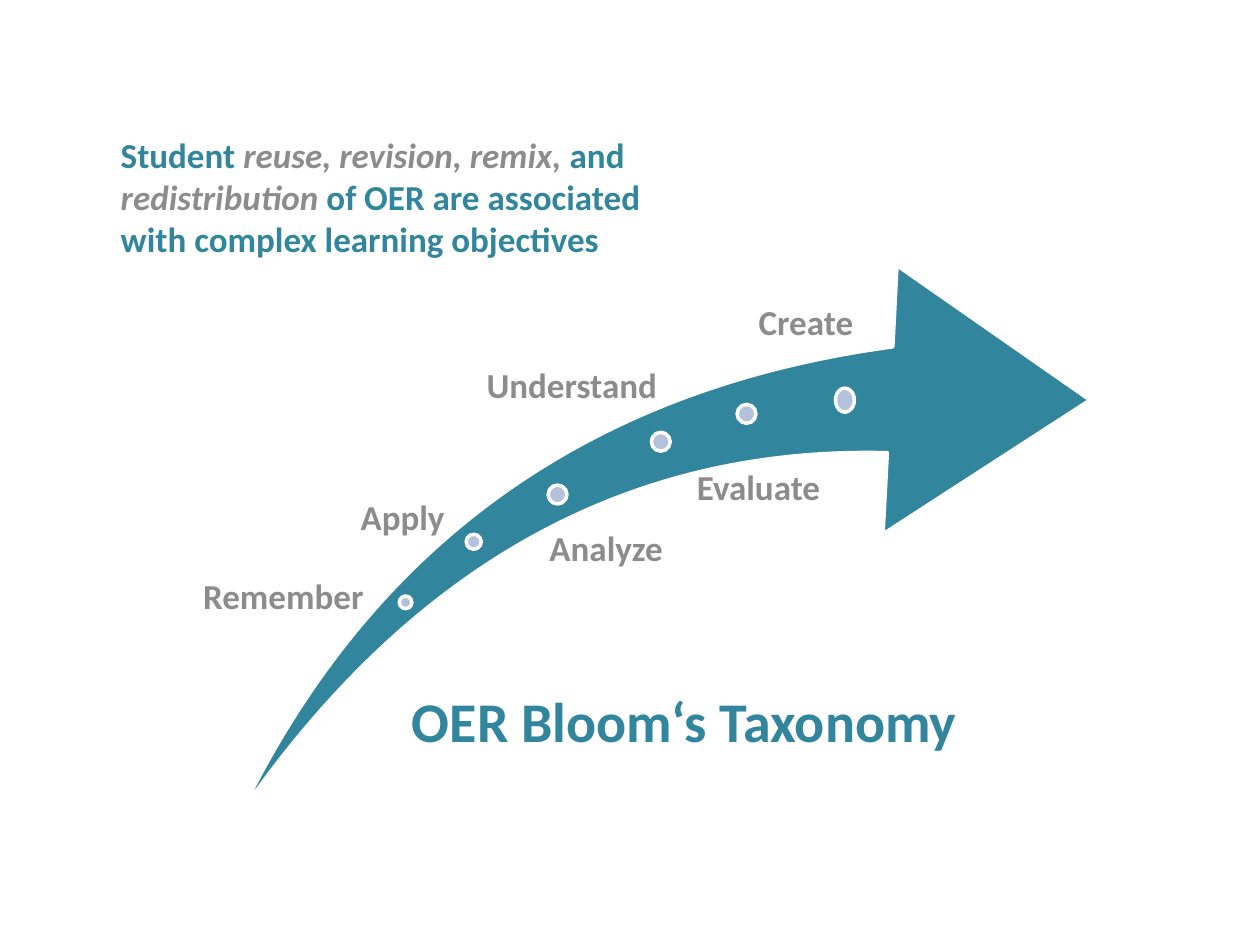
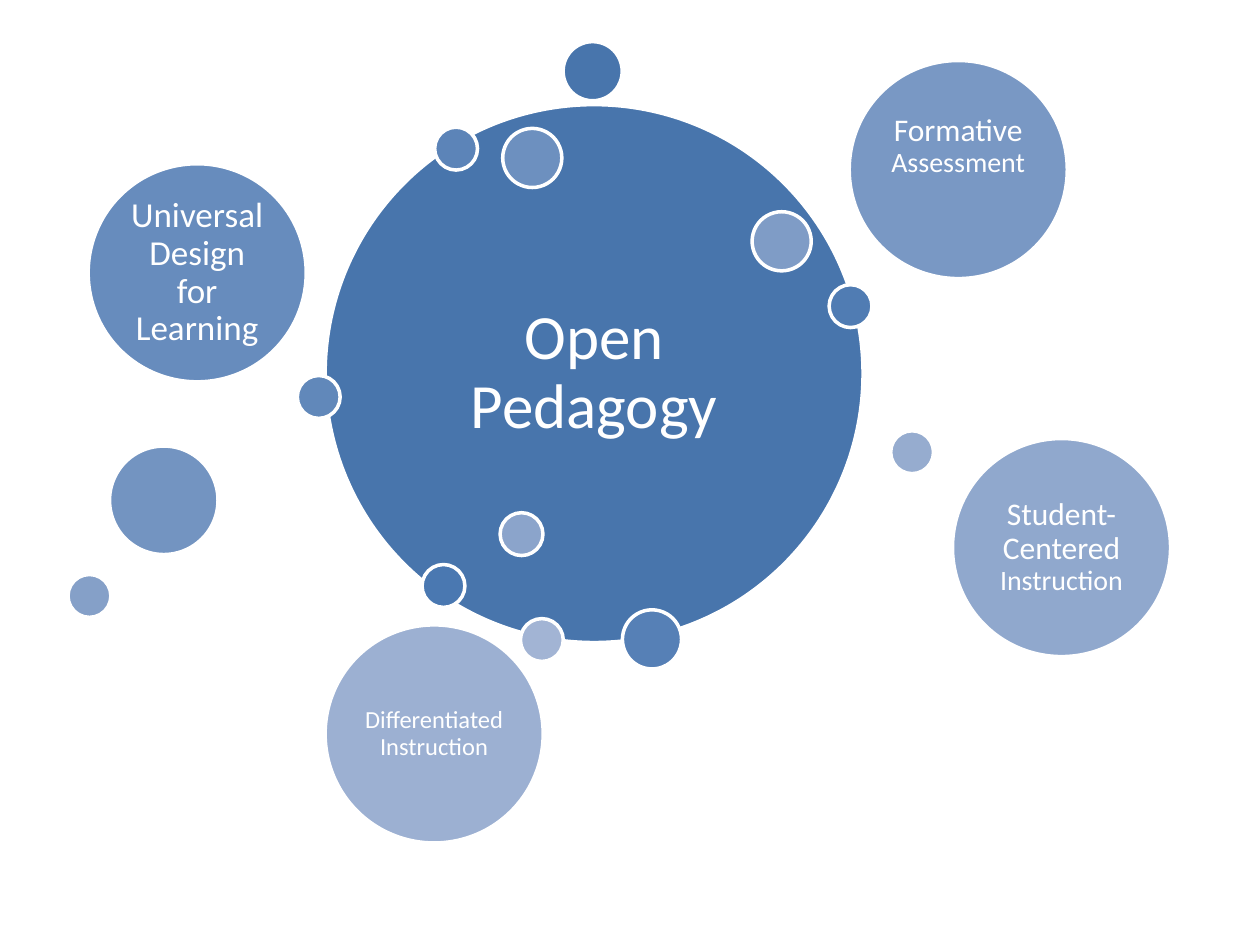
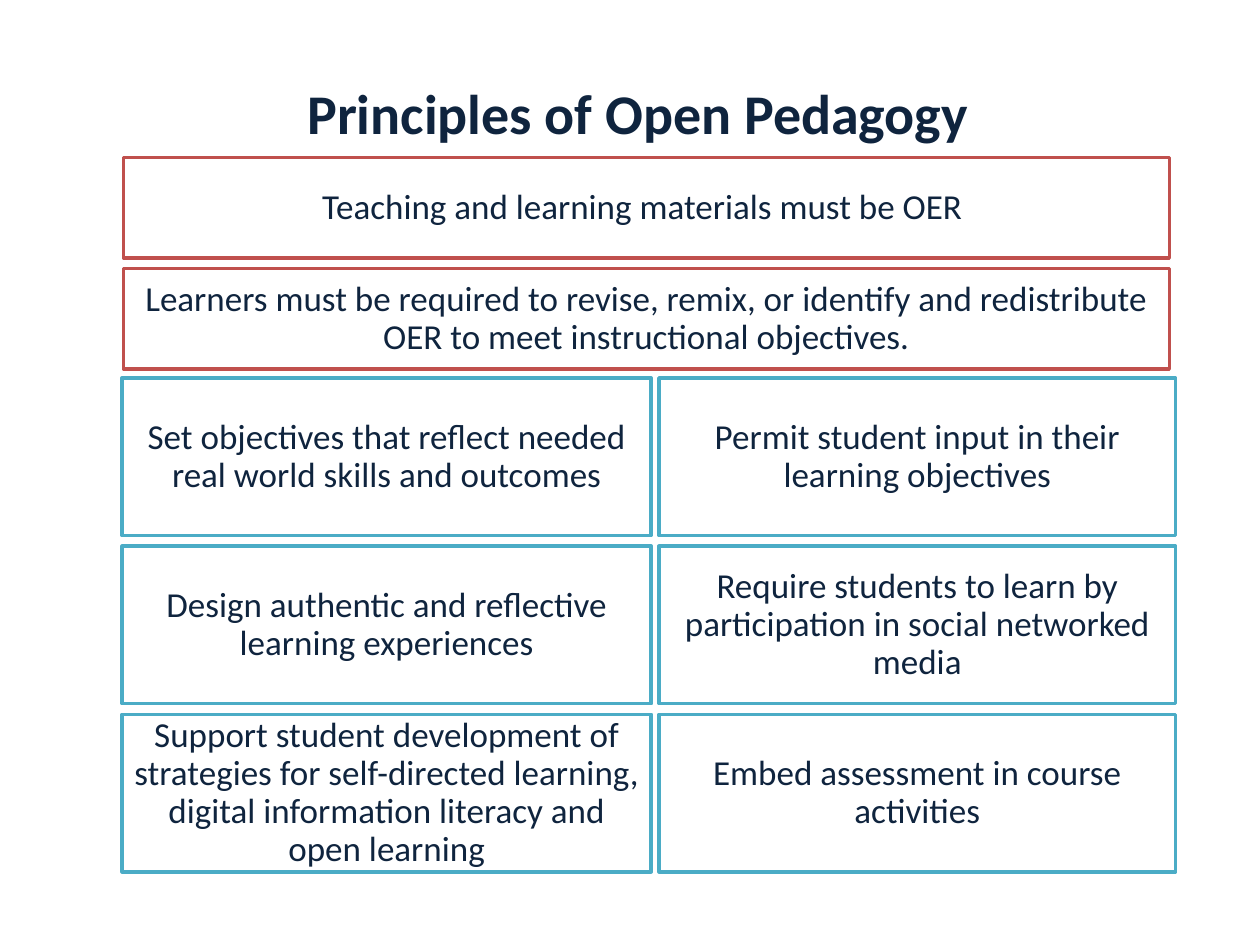
"""Three slides on open pedagogy: taxonomy arrow, idea bubbles and principles."""
from pptx import Presentation
from pptx.dml.color import RGBColor
from pptx.enum import shapes, text
from pptx.util import Pt

FONT = "Calibri"
COLORS = {
    "teal": "31859C", "grey": "8C8C8C", "dot": "B3C1DB", "white": "FFFFFF",
    "navy": "0F243E", "red": "C0504D", "aqua": "4BACC6",
    "core": "4875AC", "dark": "4A78B1", "pale": "A2B4D4",
}
LEFT, CENTER = text.PP_ALIGN.LEFT, text.PP_ALIGN.CENTER
TOP, MIDDLE, BOTTOM = (text.MSO_ANCHOR.TOP, text.MSO_ANCHOR.MIDDLE,
                       text.MSO_ANCHOR.BOTTOM)

TAXONOMY_TITLE = "OER Bloom‘s Taxonomy"
ARROW_BOX = (165, 133.2, 440, 369.4)
ARROW_TURN = 9.4
ARROW_BENDS = (0.163, 0.314)
CLAIM = [
    ("Student ", "teal", False),
    ("reuse, revision, remix, ", "grey", True),
    ("and ", "teal", False),
    ("redistribution ", "grey", True),
    ("of OER are associated with complex learning objectives", "teal", False),
]
LEVELS = [
    ("Remember", (113.8, 329, 140.4, 49), TOP),
    ("Apply", (203.8, 272.2, 75.6, 49), MIDDLE),
    ("Analyze", (311.8, 293, 90.7, 42.5), MIDDLE),
    ("Understand", (275.8, 196.6, 118, 49), MIDDLE),
    ("Evaluate", (396, 262.8, 84.2, 33.8), MIDDLE),
    ("Create", (431.3, 149, 67, 49), BOTTOM),
]
DOTS = [
    (228.2, 340.6, 7.2, 7.2), (266.4, 305.3, 8.6, 8.6),
    (313.2, 277.2, 10.8, 10.8), (372.2, 247, 10.8, 10.8),
    (421.2, 231.1, 10.8, 10.8), (477.4, 221.8, 10.8, 13.7),
]

DIAMETERS = {"core": 307.4, "idea": 124.6, "large": 62, "medium": 33.8, "small": 24.5}
CORE = ("core", 185.8, 59.8, [("Open Pedagogy", 36)], 10.8, 0)
TOP_BUBBLE = ("medium", 321.8, 23.8)
BUBBLES = [
    ("small", 241.2, 322.6),
    ("small", 473.8, 162.7),
    ("medium", 355.7, 348.5),
    ("small", 248.4, 72.7),
    ("small", 169.9, 214.6),
    ("idea", 50.4, 93.6, [("Universal Design for Learning", 20)], 5.8, 0),
    ("medium", 287.3, 73.4),
    ("large", 62.6, 254.9),
    ("idea", 485.3, 34.6, [("Formative ", 18), ("Assessment", 16)], 5, 26),
    ("medium", 429.8, 121),
    ("small", 38.9, 328.3),
    ("small", 285.8, 293),
    ("idea", 544.3, 250.6, [("Student-Centered ", 18), ("Instruction", 16)], 5, 0),
    ("small", 509, 246.2),
    ("idea", 185.8, 357.1, [("Differentiated Instruction", 14)], 4.3, 0),
    ("small", 297.4, 353.5),
]

PRINCIPLES_TITLE = "Principles of Open Pedagogy "
REQUIREMENTS = [
    "Teaching and learning materials must be OER ",
    "Learners must be required to revise, remix, or identify and redistribute "
    "OER to meet instructional objectives.",
]
PRACTICES = [
    ("Set objectives that reflect needed real world skills and outcomes",
     "Permit student input in their learning objectives"),
    ("Design authentic and reflective learning experiences",
     "Require students to learn by participation in social networked media"),
    ("Support student development of strategies for self-directed learning, "
     "digital information literacy and open learning",
     "Embed assessment in course activities"),
]
PRACTICE_COLUMNS = [(69.8, 302.4), (376.6, 295.2)]


def rgb(color):
    return RGBColor.from_string(COLORS.get(color, color))


def write(frame, runs, anchor=MIDDLE, align=CENTER, inset=None, lift=0, spacing=0.9):
    frame.word_wrap = True
    frame.auto_size = text.MSO_AUTO_SIZE.NONE
    frame.vertical_anchor = anchor
    if inset is not None:
        frame.margin_left = frame.margin_right = frame.margin_top = Pt(inset)
        frame.margin_bottom = Pt(inset + lift)
    paragraph = frame.paragraphs[0]
    paragraph.alignment = align
    paragraph.line_spacing = spacing
    for words, size, color, bold, italic in runs:
        run = paragraph.add_run()
        run.text = words
        font = run.font
        font.name, font.size, font.bold, font.italic = FONT, Pt(size), bold, italic
        font.color.rgb = rgb(color)


def place_title(slide, words, box, color, align):
    title = slide.shapes.title
    title.left, title.top, title.width, title.height = map(Pt, box)
    write(title.text_frame, [(words, 32, color, True, False)], align=align, spacing=1.0)


def add_label(slide, box, runs, **layout):
    label = slide.shapes.add_textbox(*map(Pt, box))
    write(label.text_frame, runs, align=LEFT, **layout)


def add_figure(slide, kind, box, fill, line="white"):
    figure = slide.shapes.add_shape(kind, *map(Pt, box))
    figure.shadow.inherit = False
    figure.fill.solid()
    figure.fill.fore_color.rgb = rgb(fill)
    figure.line.color.rgb = rgb(line)
    figure.line.width = Pt(2)
    return figure


def add_bubble(slide, fill, size, left, top, runs=(), inset=0, lift=0):
    diameter = DIAMETERS[size]
    bubble = add_figure(slide, shapes.MSO_SHAPE.OVAL, (left, top, diameter, diameter), fill)
    if runs:
        write(bubble.text_frame,
              [(words, points, "white", False, False) for words, points in runs],
              inset=inset, lift=lift)


def add_card(slide, box, words, line):
    card = add_figure(slide, shapes.MSO_SHAPE.RECTANGLE, box, "white", line)
    write(card.text_frame, [(words, 20, "navy", False, False)], inset=3.6)


def shade(step, steps):
    ends = zip(rgb("dark"), rgb("pale"))
    return "".join(f"{round(a + (b - a) * step / steps):02X}" for a, b in ends)


def build_taxonomy(slide):
    place_title(slide, TAXONOMY_TITLE, (228.2, 353.5, 329.8, 116), "teal", LEFT)
    arrow = add_figure(slide, shapes.MSO_SHAPE.SWOOSH_ARROW, ARROW_BOX, "teal")
    arrow.rotation = ARROW_TURN
    for index, bend in enumerate(ARROW_BENDS):
        arrow.adjustments[index] = bend
    for dot in DOTS:
        add_figure(slide, shapes.MSO_SHAPE.OVAL, dot, "dot")
    for level, box, anchor in LEVELS:
        add_label(slide, box, [(level, 20, "grey", True, False)], anchor=anchor, inset=2.2)
    add_label(slide, (61.9, 72.7, 351.4, 34.6),
              [(words, 20, color, True, italic) for words, color, italic in CLAIM],
              anchor=TOP, spacing=1.0)


def build_bubbles(slide):
    for bubble in (CORE, TOP_BUBBLE):
        add_bubble(slide, "core", *bubble)
    for step, bubble in enumerate(BUBBLES):
        add_bubble(slide, shade(step, len(BUBBLES) - 1), *bubble)


def build_principles(slide):
    place_title(slide, PRINCIPLES_TITLE, (67.7, 36, 601.2, 56.2), "navy", CENTER)
    for row, requirement in enumerate(REQUIREMENTS):
        add_card(slide, (70.6, 90 + 63.4 * row, 597.6, 57.6), requirement, "red")
    for row, pair in enumerate(PRACTICES):
        for (left, width), practice in zip(PRACTICE_COLUMNS, pair):
            add_card(slide, (left, 216 + 96.1 * row, width, 90), practice, "aqua")


def main():
    deck = Presentation()
    deck.slide_width, deck.slide_height = Pt(720), Pt(540)
    title_only, blank = deck.slide_layouts[5], deck.slide_layouts[6]
    for layout, build in ((title_only, build_taxonomy), (blank, build_bubbles),
                          (title_only, build_principles)):
        build(deck.slides.add_slide(layout))
    deck.save("out.pptx")


if __name__ == "__main__":
    main()
